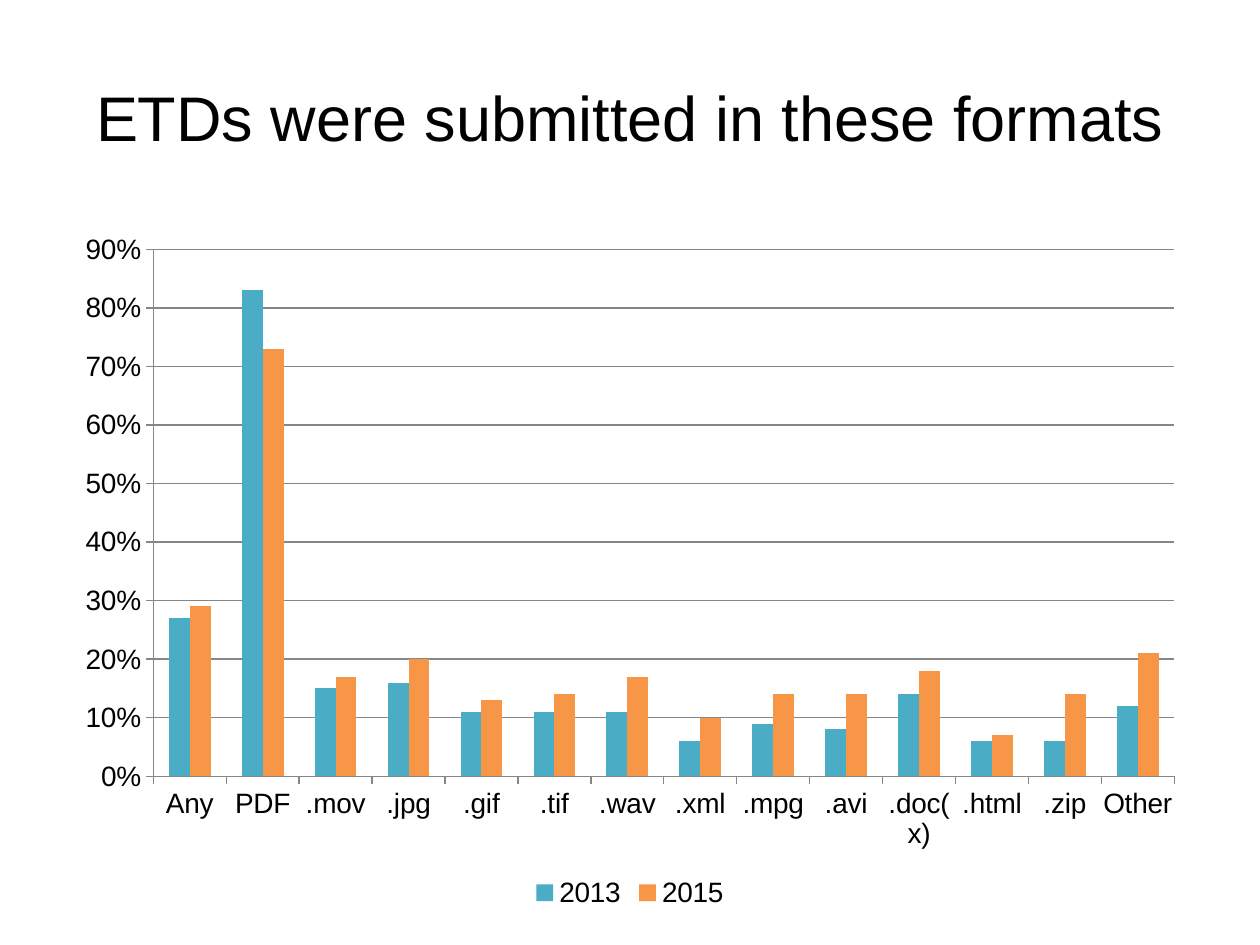
"""Build a slide comparing the file formats of submitted ETDs in 2013 and 2015."""
from pptx import Presentation
from pptx.chart.data import CategoryChartData
from pptx.dml.color import RGBColor
from pptx.enum.chart import XL_CHART_TYPE as ChartType
from pptx.enum.chart import XL_LEGEND_POSITION as LegendPosition
from pptx.enum.chart import XL_TICK_MARK as TickMark
from pptx.enum.text import MSO_ANCHOR as Anchor
from pptx.enum.text import PP_ALIGN as Align
from pptx.util import Inches, Pt

BLACK = RGBColor(0x00, 0x00, 0x00)
GRAY = RGBColor(0x86, 0x86, 0x86)
TEAL = RGBColor(0x4B, 0xAC, 0xC6)
ORANGE = RGBColor(0xF7, 0x96, 0x46)

FORMATS = ["Any", "PDF", ".mov", ".jpg", ".gif", ".tif", ".wav", ".xml",
           ".mpg", ".avi", ".doc(x)", ".html", ".zip", "Other"]
SHARES = {
    "2013": (TEAL, [0.27, 0.83, 0.15, 0.16, 0.11, 0.11, 0.11,
                    0.06, 0.09, 0.08, 0.14, 0.06, 0.06, 0.12]),
    "2015": (ORANGE, [0.29, 0.73, 0.17, 0.2, 0.13, 0.14, 0.17,
                      0.1, 0.14, 0.14, 0.18, 0.07, 0.14, 0.21]),
}


class SlideBuilder:
    font_name = "Arial"

    def __init__(self, slide):
        self.slide = slide

    def style(self, font, size):
        font.name = self.font_name
        font.size = Pt(size)
        font.color.rgb = BLACK

    def title(self, text, left, top, width, height):
        frame = self.slide.shapes.add_textbox(
            Inches(left), Inches(top), Inches(width), Inches(height)).text_frame
        frame.word_wrap = True
        frame.vertical_anchor = Anchor.MIDDLE
        heading = frame.paragraphs[0]
        heading.alignment = Align.CENTER
        run = heading.add_run()
        run.text = text
        self.style(run.font, 36)

    def column_chart(self, categories, shares, left, top, width, height):
        data = CategoryChartData(number_format="0%")
        data.categories = categories
        for year, (_, values) in shares.items():
            data.add_series(year, values)
        chart = self.slide.shapes.add_chart(
            ChartType.COLUMN_CLUSTERED, Inches(left), Inches(top),
            Inches(width), Inches(height), data).chart
        self.style(chart.font, 16)
        chart.has_title = False
        chart.has_legend = True
        chart.legend.position = LegendPosition.BOTTOM
        chart.legend.include_in_layout = False

        columns = chart.plots[0]
        columns.gap_width = 150
        columns.overlap = 0
        columns.vary_by_categories = False
        for series, (color, _) in zip(columns.series, shares.values()):
            series.format.fill.solid()
            series.format.fill.fore_color.rgb = color

        percent = chart.value_axis
        percent.minimum_scale, percent.maximum_scale = 0, 0.9
        percent.major_unit = 0.1
        percent.has_major_gridlines = True
        percent.tick_labels.number_format = "0%"
        percent.tick_labels.number_format_is_linked = False
        for axis in (chart.category_axis, percent):
            axis.major_tick_mark = TickMark.OUTSIDE
            axis.minor_tick_mark = TickMark.NONE
        for part in (chart.category_axis, percent, percent.major_gridlines):
            part.format.line.color.rgb = GRAY
            part.format.line.width = Pt(0.75)


def main():
    deck = Presentation()
    deck.slide_width, deck.slide_height = Inches(10), Inches(7.5)
    builder = SlideBuilder(deck.slides.add_slide(deck.slide_layouts[6]))
    builder.title("ETDs were submitted in these formats", 0.5, 0.3, 9, 1.25)
    builder.column_chart(FORMATS, SHARES, 0.5, 1.75, 9, 5.5)
    deck.save("out.pptx")


if __name__ == "__main__":
    main()
